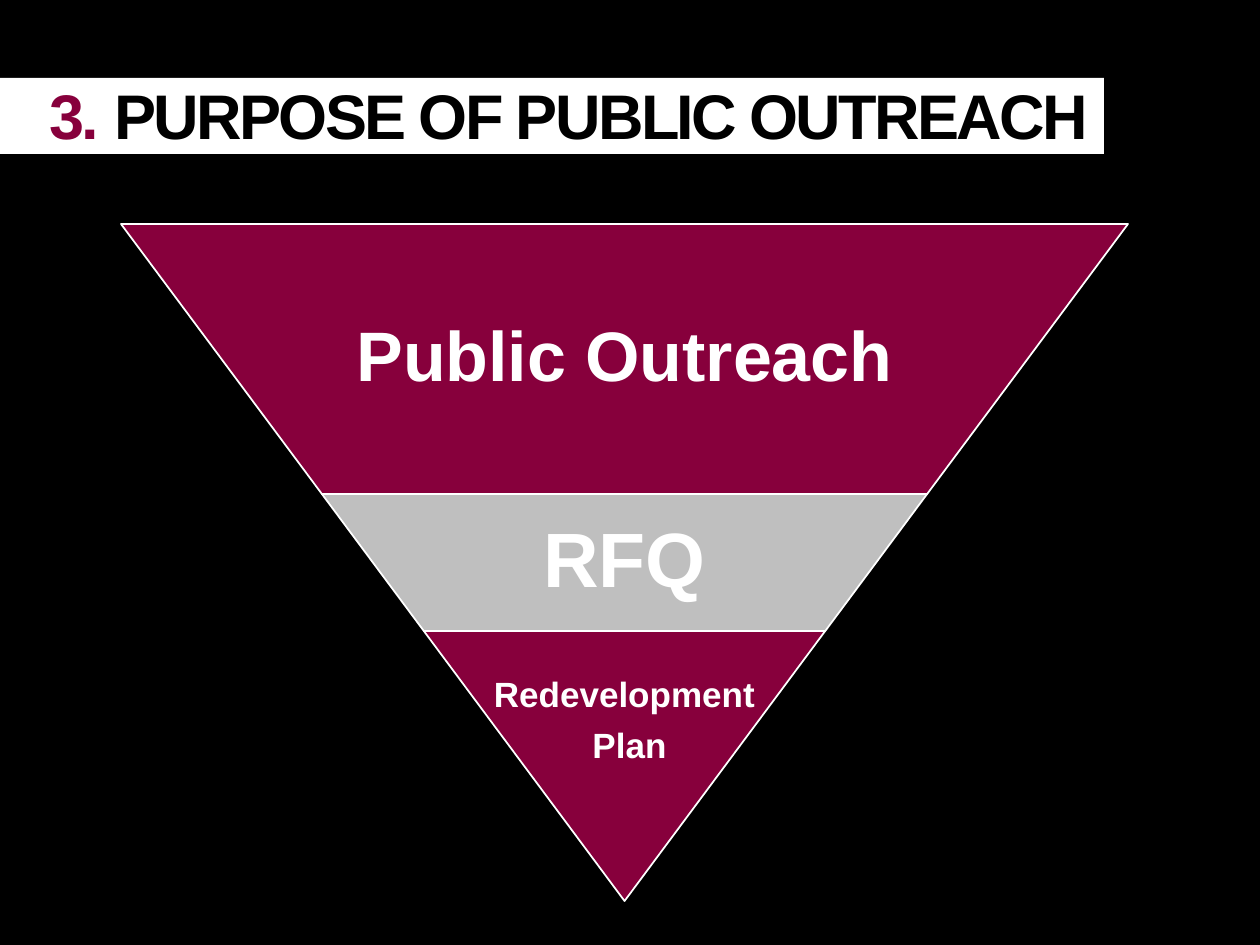
from dataclasses import dataclass

from pptx import Presentation
from pptx.dml.color import RGBColor
from pptx.enum.shapes import MSO_SHAPE
from pptx.enum.text import MSO_ANCHOR, MSO_AUTO_SIZE, PP_ALIGN
from pptx.util import Emu, Pt


@dataclass(frozen=True)
class Theme:
    font: str = "Arial"
    black: str = "000000"
    white: str = "FFFFFF"
    maroon: str = "87003C"
    gray: str = "BFBFBF"
    title_size: int = 36
    outreach_size: int = 40
    rfq_size: int = 44
    plan_size: int = 20


THEME = Theme()
SLIDE_WIDTH, SLIDE_HEIGHT = 1260, 945
FUNNEL_LEFT, FUNNEL_TOP, FUNNEL_WIDTH = 121, 224, 1007
SLOPE = 0.744  # horizontal inset per unit of height


def px(length):
    return Emu(round(length * 914400 / 126))


def add_span(para, text, *, size, color, tracking=None):
    span = para.add_run()
    span.text = text
    span.font.name = THEME.font
    span.font.size = Pt(size)
    span.font.bold = True
    span.font.color.rgb = RGBColor.from_string(color)
    if tracking is not None:
        span.font._element.set("spc", str(round(tracking * 100)))


class SlideBuilder:
    def __init__(self, deck, theme):
        self.theme = theme
        self.slide = deck.slides.add_slide(deck.slide_layouts[5])
        self.slide.background.fill.solid()
        self.slide.background.fill.fore_color.rgb = RGBColor.from_string(theme.black)

    def shape(self, kind, left, top, width, height, fill, line=None):
        shape = self.slide.shapes.add_shape(kind, px(left), px(top), px(width), px(height))
        shape.shadow.inherit = False
        shape.fill.solid()
        shape.fill.fore_color.rgb = RGBColor.from_string(fill)
        if line:
            shape.line.color.rgb = RGBColor.from_string(line)
            shape.line.width = Pt(1)
        else:
            shape.line.fill.background()
        return shape

    def title(self, number, text):
        """Put the title over a white bar that starts at the slide's left edge."""
        title = self.slide.shapes.title
        bar = self.shape(MSO_SHAPE.RECTANGLE, 0, 78, 1104, 76, self.theme.white)
        title.element.addprevious(bar.element)
        title.left, title.top, title.width, title.height = map(px, (37, 88, 1091, 71))
        frame = title.text_frame
        frame.auto_size = MSO_AUTO_SIZE.NONE
        frame.vertical_anchor = MSO_ANCHOR.TOP
        para = frame.paragraphs[0]
        para.alignment = PP_ALIGN.LEFT
        para.line_spacing = 0.75
        for part, color in ((number, self.theme.maroon), (text, self.theme.black)):
            add_span(para, part, size=self.theme.title_size, color=color, tracking=-1.5)

    def tier(self, left, top, width, height, fill):
        tier = self.shape(MSO_SHAPE.TRAPEZOID, left, top, width, height, fill, self.theme.white)
        tier.adjustments[0] = SLOPE
        tier.rotation = 180

    def label(self, lines, left, top, width, height, size, anchor, last_indent=0):
        box = self.slide.shapes.add_textbox(px(left), px(top), px(width), px(height))
        frame = box.text_frame
        frame.word_wrap = True
        frame.vertical_anchor = anchor
        frame.margin_left = frame.margin_right = px(8)
        frame.margin_top = frame.margin_bottom = 0
        for index, line in enumerate(lines):
            para = frame.paragraphs[0] if index == 0 else frame.add_paragraph()
            para.alignment = PP_ALIGN.CENTER
            para.line_spacing = 0.9
            if index < len(lines) - 1:
                para.space_after = Pt(8)
            elif last_indent:
                para._p.get_or_add_pPr().set("marL", str(px(last_indent)))
            add_span(para, line, size=size, color=self.theme.white)


def main():
    deck = Presentation()
    deck.slide_width, deck.slide_height = px(SLIDE_WIDTH), px(SLIDE_HEIGHT)
    page = SlideBuilder(deck, THEME)
    page.title("3. ", "PURPOSE OF PUBLIC OUTREACH")

    # lines, height, fill, text size, anchor, label offset, indent of last line
    tiers = (
        (["Public Outreach"], 270, THEME.maroon, THEME.outreach_size, MSO_ANCHOR.MIDDLE, 0, 0),
        (["RFQ"], 137, THEME.gray, THEME.rfq_size, MSO_ANCHOR.MIDDLE, 0, 0),
        (["Redevelopment", "Plan"], 270, THEME.maroon, THEME.plan_size, MSO_ANCHOR.TOP, 46, 10),
    )
    left, top, width = FUNNEL_LEFT, FUNNEL_TOP, FUNNEL_WIDTH
    for lines, height, fill, size, anchor, offset, indent in tiers:
        page.tier(left, top, width, height, fill)
        margin = 0 if offset else width * 0.175
        page.label(lines, left + margin, top + offset, width - 2 * margin,
                   height - offset, size, anchor, indent)
        left += SLOPE * height
        width -= 2 * SLOPE * height
        top += height

    deck.save("out.pptx")


if __name__ == "__main__":
    main()
